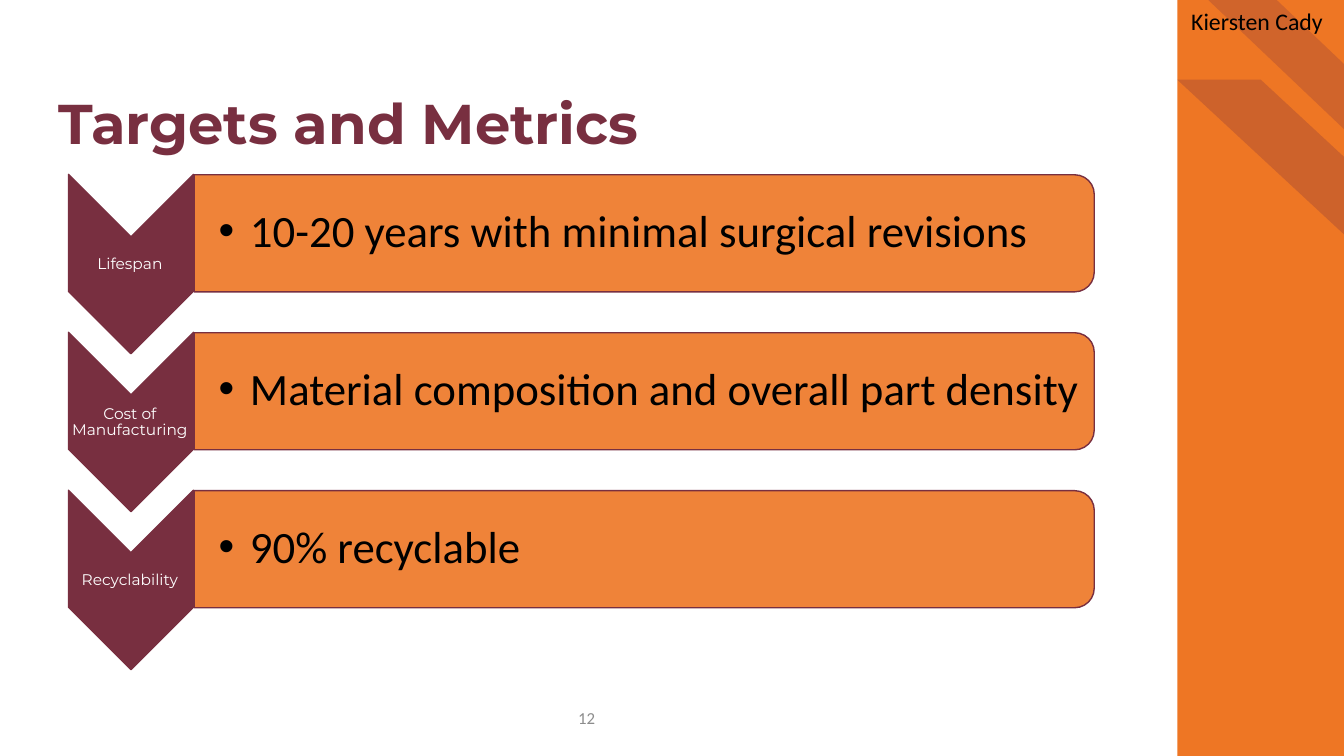
from dataclasses import dataclass

from lxml.etree import SubElement
from pptx import Presentation
from pptx.dml.color import RGBColor
from pptx.enum.shapes import MSO_SHAPE
from pptx.enum.text import MSO_ANCHOR, MSO_AUTO_SIZE, PP_ALIGN
from pptx.oxml.ns import qn
from pptx.util import Cm, Pt


@dataclass(frozen=True)
class Theme:
    garnet: str = "782F40"
    orange: str = "EE7624"
    black: str = "000000"
    white: str = "FFFFFF"
    grey: str = "8C8C8C"
    heading_font: str = "Montserrat"
    body_font: str = "Calibri"
    title_size: int = 40
    target_size: int = 32
    author_size: int = 17
    number_size: int = 12
    label_size: int = 11


class SlideBuilder:
    def __init__(self, prs, theme):
        self.theme = theme
        self.s = prs.slides.add_slide(prs.slide_layouts[5])

    def shape(self, kind, box, color, opacity=100, line=None, rotation=0, flip=False):
        sp = self.s.shapes.add_shape(kind, *map(Cm, box))
        sp.shadow.inherit = False
        sp.rotation = rotation
        sp.fill.solid()
        sp.fill.fore_color.rgb = RGBColor.from_string(color)
        if opacity < 100:
            clr = sp._element.spPr.find(qn("a:solidFill"))[0]
            SubElement(clr, qn("a:alpha"), val=str(opacity * 1000))
        if line:
            sp.line.color.rgb = RGBColor.from_string(line)
            sp.line.width = Pt(1)
        else:
            sp.line.fill.background()
        if flip:
            sp._element.spPr.find(qn("a:xfrm")).set("flipH", "1")
        return sp

    def fill_text(self, sp, text, size, color, font, bold=False, align=PP_ALIGN.LEFT,
                  anchor=MSO_ANCHOR.TOP, insets=(0.25, 0.13, 0.25, 0.13),
                  spacing=1.0, bullet_indent=None):
        tf = sp.text_frame
        tf.word_wrap = True
        tf.auto_size = MSO_AUTO_SIZE.NONE
        tf.vertical_anchor = anchor
        tf.margin_left, tf.margin_top, tf.margin_right, tf.margin_bottom = map(Cm, insets)
        p = tf.paragraphs[0]
        p.alignment = align
        p.line_spacing = spacing
        p.space_before = Pt(0)
        if bullet_indent:
            pPr = p._p.get_or_add_pPr()
            pPr.set("marL", str(Cm(bullet_indent)))
            pPr.set("indent", str(-Cm(bullet_indent)))
            SubElement(pPr, qn("a:buFont"), typeface="Arial")
            SubElement(pPr, qn("a:buChar"), char="•")
        r = p.add_run()
        r.text = text
        r.font.size = Pt(size)
        r.font.name = font
        r.font.bold = bold
        r.font.color.rgb = RGBColor.from_string(color)

    def text(self, box, text, size, color, font, **style):
        sp = self.s.shapes.add_textbox(*map(Cm, box))
        self.fill_text(sp, text, size, color, font, **style)

    def title(self, box, text):
        t = self.theme
        sp = self.s.shapes.title
        sp.left, sp.top, sp.width, sp.height = map(Cm, box)
        self.fill_text(sp, text, t.title_size, t.garnet, t.heading_font, bold=True,
                       anchor=MSO_ANCHOR.BOTTOM, insets=(0, 0, 0, 0), spacing=0.9)

    def side_band(self):
        t = self.theme
        self.shape(MSO_SHAPE.RECTANGLE, (29.67, 0, 4.2, 19.05), t.orange)
        lower = self.shape(MSO_SHAPE.DIAGONAL_STRIPE, (29.67, 2.01, 4.27, 3.96),
                           t.garnet, opacity=28, flip=True)
        lower.adjustments[0] = 0.507
        self.shape(MSO_SHAPE.DIAGONAL_STRIPE, (30.45, 0, 3.45, 3.28),
                   t.garnet, opacity=25, flip=True)

    def target_row(self, top, label, target):
        """Draw a downward chevron with its label, and the bar beside it."""
        t = self.theme
        self.shape(MSO_SHAPE.CHEVRON, (1.04, top + 0.68, 4.52, 3.15), t.garnet,
                   line=t.garnet, rotation=90)
        self.text((1.7, top + 1.59, 3.15, 1.35), label, t.label_size, t.white,
                  t.heading_font, align=PP_ALIGN.CENTER, anchor=MSO_ANCHOR.MIDDLE,
                  insets=(0.02,) * 4, spacing=0.9)
        self.shape(MSO_SHAPE.ROUND_2_SAME_RECTANGLE, (14.76, top - 9.86, 2.95, 22.68),
                   t.orange, opacity=90, line=t.garnet, rotation=90)
        self.text((4.88, top + 0.15, 22.56, 2.64), target, t.target_size, t.black,
                  t.body_font, anchor=MSO_ANCHOR.MIDDLE,
                  insets=(0.63, 0.05, 0.05, 0.05), spacing=0.9, bullet_indent=0.79)


TARGETS = [
    ("Lifespan", "10-20 years with minimal surgical revisions"),
    ("Cost of Manufacturing", "Material composition and overall part density"),
    ("Recyclability", "90% recyclable"),
]
FIRST_ROW, ROW_PITCH = 4.4, 3.98


def main():
    prs = Presentation()
    prs.slide_width, prs.slide_height = Cm(33.87), Cm(19.05)
    t = Theme()
    slide = SlideBuilder(prs, t)
    slide.side_band()
    slide.title((1.47, 1.27, 26.67, 2.67), "Targets and Metrics")
    for i, (label, target) in enumerate(TARGETS):
        slide.target_row(FIRST_ROW + i * ROW_PITCH, label, target)
    slide.text((13.77, 17.7, 2.03, 0.76), "12", t.number_size, t.grey, t.body_font,
               align=PP_ALIGN.CENTER, anchor=MSO_ANCHOR.MIDDLE)
    slide.text((29.77, 0.05, 3.99, 1.7), "Kiersten Cady", t.author_size, t.black,
               t.body_font)
    prs.save("out.pptx")


if __name__ == "__main__":
    main()
